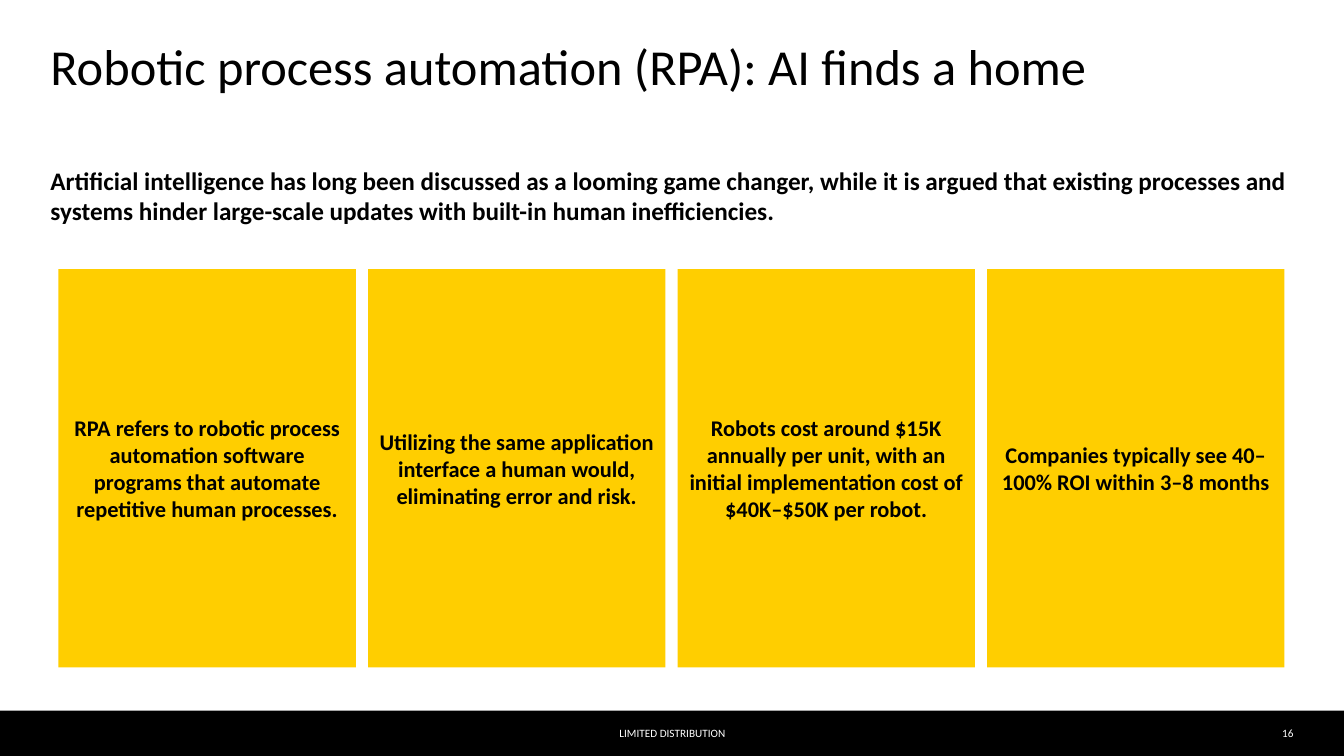
from dataclasses import dataclass

from pptx import Presentation
from pptx.dml.color import RGBColor
from pptx.enum.shapes import MSO_SHAPE
from pptx.enum.text import MSO_ANCHOR, MSO_AUTO_SIZE, PP_ALIGN
from pptx.shapes.autoshape import Shape
from pptx.slide import Slide
from pptx.util import Inches, Pt

COLORS = {"black": "000000", "white": "FFFFFF", "yellow": "FFCE00"}
FONT = "Calibri"


@dataclass(frozen=True)
class Box:
    left: float
    top: float
    width: float
    height: float

    def lengths(self) -> tuple:
        return tuple(Inches(n) for n in (self.left, self.top, self.width, self.height))


@dataclass(frozen=True)
class TextStyle:
    size: float
    color: str = "black"
    bold: bool = False
    align: PP_ALIGN = PP_ALIGN.LEFT
    anchor: MSO_ANCHOR = MSO_ANCHOR.TOP
    inset: float = 0
    line_spacing: float = 1.0


@dataclass(frozen=True)
class Label:
    text: str
    box: Box
    style: TextStyle


TITLE = Label(
    "Robotic process automation (RPA): AI finds a home",
    Box(0.5, 0.42, 12.33, 0.66),
    TextStyle(36, line_spacing=0.9),
)
LABELS = [
    Label(
        "Artificial intelligence has long been discussed as a looming game changer, "
        "while it is argued that existing processes and systems hinder large-scale "
        "updates with built-in human inefficiencies.",
        Box(0.5, 1.64, 12.33, 0.77),
        TextStyle(18, bold=True),
    ),
    Label(
        "LIMITED DISTRIBUTION",
        Box(2.17, 7.05, 9, 0.45),
        TextStyle(8, "white", align=PP_ALIGN.CENTER, anchor=MSO_ANCHOR.MIDDLE),
    ),
    Label(
        "16",
        Box(12.38, 7.05, 0.45, 0.45),
        TextStyle(8, "white", align=PP_ALIGN.RIGHT, anchor=MSO_ANCHOR.MIDDLE),
    ),
]

FOOTER_BAR = Box(0, 7.05, 13.33, 0.45)
FIRST_CARD = Box(0.58, 2.67, 2.95, 3.95)
CARD_GAP = 0.12
CARD_STYLE = TextStyle(
    16, bold=True, align=PP_ALIGN.CENTER, anchor=MSO_ANCHOR.MIDDLE, inset=0.1
)
CARD_TEXTS = [
    "RPA refers to robotic process automation software programs that "
    "automate repetitive human processes.",
    "Utilizing the same application interface a human would, "
    "eliminating error and risk.",
    "Robots cost around $15K annually per unit, with an initial "
    "implementation cost of $40K–$50K per robot.",
    "Companies typically see 40–100% ROI within 3–8 months",
]


def rgb(name: str) -> RGBColor:
    return RGBColor.from_string(COLORS[name])


def write_text(shape: Shape, text: str, style: TextStyle) -> None:
    frame = shape.text_frame
    frame.word_wrap = True
    frame.auto_size = MSO_AUTO_SIZE.NONE
    frame.vertical_anchor = style.anchor
    frame.margin_left = frame.margin_right = Inches(style.inset)
    frame.margin_top = frame.margin_bottom = Inches(style.inset)
    frame.text = text
    paragraph = frame.paragraphs[0]
    paragraph.alignment = style.align
    paragraph.line_spacing = style.line_spacing
    paragraph.font.name = FONT
    paragraph.font.size = Pt(style.size)
    paragraph.font.bold = style.bold
    paragraph.font.color.rgb = rgb(style.color)


def add_rectangle(slide: Slide, box: Box, color: str) -> Shape:
    shape = slide.shapes.add_shape(MSO_SHAPE.RECTANGLE, *box.lengths())
    shape.shadow.inherit = False
    shape.fill.solid()
    shape.fill.fore_color.rgb = rgb(color)
    shape.line.fill.background()
    return shape


def add_label(slide: Slide, label: Label) -> None:
    write_text(slide.shapes.add_textbox(*label.box.lengths()), label.text, label.style)


def add_title(slide: Slide, label: Label) -> None:
    title = slide.shapes.title
    title.left, title.top, title.width, title.height = label.box.lengths()
    write_text(title, label.text, label.style)


def add_cards(slide: Slide) -> None:
    first = FIRST_CARD
    for index, text in enumerate(CARD_TEXTS):
        left = first.left + index * (first.width + CARD_GAP)
        box = Box(left, first.top, first.width, first.height)
        write_text(add_rectangle(slide, box, "yellow"), text, CARD_STYLE)


def main() -> None:
    presentation = Presentation()
    presentation.slide_width = Inches(13.33)
    presentation.slide_height = Inches(7.5)
    slide = presentation.slides.add_slide(presentation.slide_layouts[5])

    # Footer bar, behind its labels
    add_rectangle(slide, FOOTER_BAR, "black")

    # Title, introduction and footer text
    add_title(slide, TITLE)
    for label in LABELS:
        add_label(slide, label)

    # Row of equal cards
    add_cards(slide)

    presentation.save("out.pptx")


if __name__ == "__main__":
    main()
